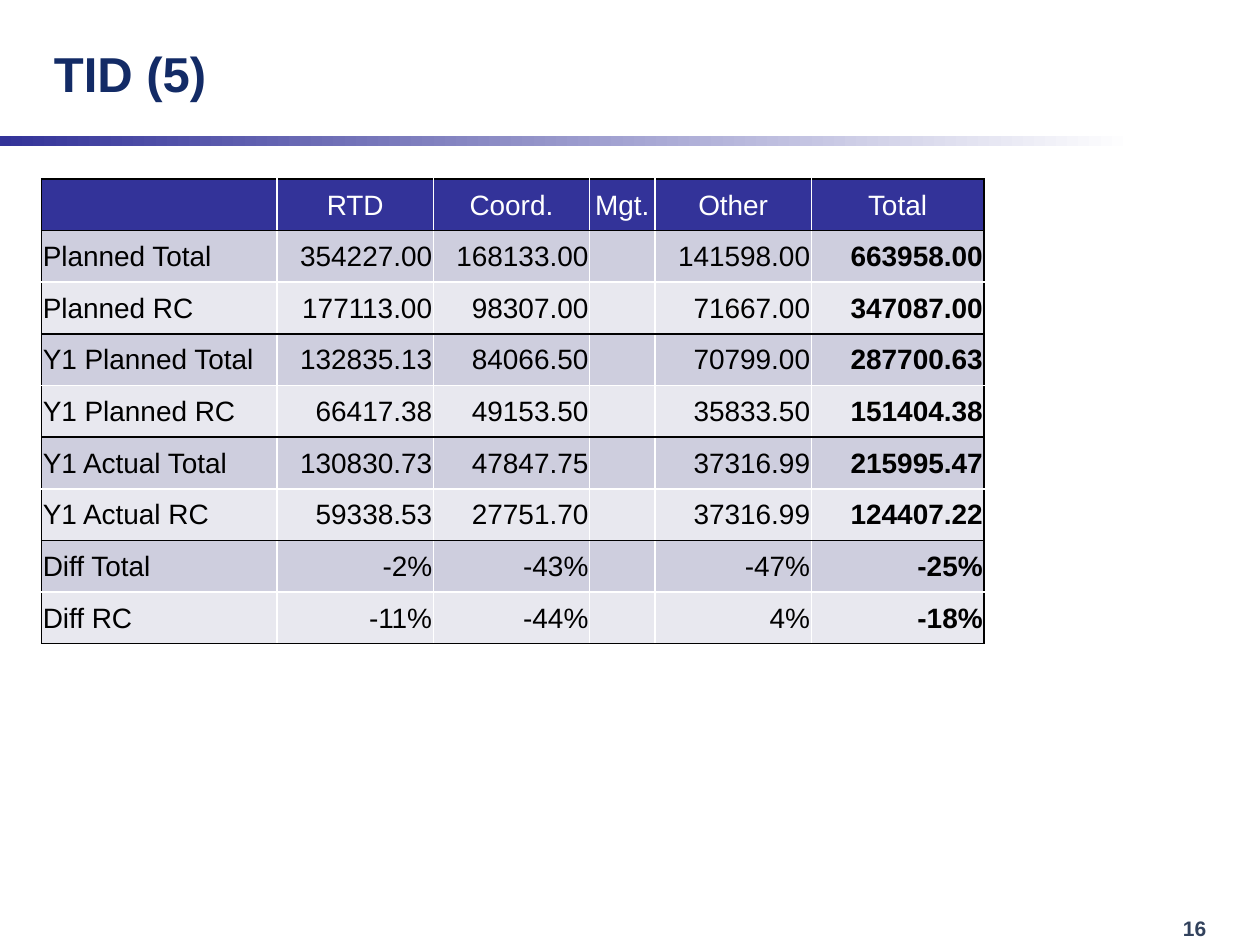
from pptx import Presentation
from pptx.dml.color import RGBColor
from pptx.enum.shapes import MSO_SHAPE
from pptx.enum.text import MSO_ANCHOR, PP_ALIGN
from pptx.oxml.ns import qn
from pptx.util import Inches, Pt
from lxml import etree

RECT = MSO_SHAPE.RECTANGLE
MIDDLE = MSO_ANCHOR.MIDDLE
LEFT, CENTER, RIGHT = PP_ALIGN.LEFT, PP_ALIGN.CENTER, PP_ALIGN.RIGHT

WHITE = RGBColor(0xFF, 0xFF, 0xFF)
BLACK = RGBColor(0, 0, 0)
BLUE = RGBColor(0x33, 0x33, 0x99)
NAVY = RGBColor(0x13, 0x2B, 0x66)
SLATE = RGBColor(0x32, 0x42, 0x5D)
DARK = RGBColor(0xCE, 0xCE, 0xDE)
LIGHT = RGBColor(0xE8, 0xE8, 0xEF)

COLS = [1.87, 1.24, 1.24, 0.52, 1.24, 1.37]
ROW = 0.41
DATA = [
    ["", "RTD", "Coord.", "Mgt.", "Other", "Total"],
    ["Planned Total", "354227.00", "168133.00", "", "141598.00", "663958.00"],
    ["Planned RC", "177113.00", "98307.00", "", "71667.00", "347087.00"],
    ["Y1 Planned Total", "132835.13", "84066.50", "", "70799.00", "287700.63"],
    ["Y1 Planned RC", "66417.38", "49153.50", "", "35833.50", "151404.38"],
    ["Y1 Actual Total", "130830.73", "47847.75", "", "37316.99", "215995.47"],
    ["Y1 Actual RC", "59338.53", "27751.70", "", "37316.99", "124407.22"],
    ["Diff Total", "-2%", "-43%", "", "-47%", "-25%"],
    ["Diff RC", "-11%", "-44%", "", "4%", "-18%"],
]


class Deck:
    def __init__(self, slide, font="Arial"):
        self.slide = slide
        self.font = font

    def style(self, para, size, color, bold=False, align=LEFT):
        para.alignment = align
        font = para.font
        for run in para.runs:
            font = run.font
        font.name, font.size, font.bold = self.font, Pt(size), bold
        font.color.rgb = color

    def text(self, words, left, top, width, height, size, color):
        box = self.slide.shapes.add_textbox(
            Inches(left), Inches(top), Inches(width), Inches(height))
        frame = box.text_frame
        frame.word_wrap = True
        frame.vertical_anchor = MIDDLE
        frame.text = words
        self.style(frame.paragraphs[0], size, color, bold=True)

    def band(self, left, top, width, height, start, end, stop):
        """Add a bar that fades from start to end, left to right."""
        bar = self.slide.shapes.add_shape(
            RECT, Inches(left), Inches(top), Inches(width), Inches(height))
        bar.shadow.inherit = False
        bar.line.fill.background()
        bar.fill.gradient()
        bar.fill.gradient_angle = 0
        for point, color, place in zip(
                bar.fill.gradient_stops, (start, end), (0, stop)):
            point.color.rgb = color
            point.position = place

    def edges(self, cell, colors):
        """Draw the left, right, top and bottom borders; call before filling."""
        props = cell._tc.get_or_add_tcPr()
        for side, color in zip("LRTB", colors):
            line = etree.SubElement(props, qn(f"a:ln{side}"), w=str(Pt(1)))
            fill = etree.SubElement(line, qn("a:solidFill"))
            etree.SubElement(fill, qn("a:srgbClr"), val=str(color))

    def cell(self, cell, words, fill, color, bold, align, borders):
        cell.margin_left = cell.margin_right = cell.margin_top = Inches(0.01)
        cell.margin_bottom = 0
        cell.vertical_anchor = MIDDLE
        self.edges(cell, borders)
        cell.fill.solid()
        cell.fill.fore_color.rgb = fill
        cell.text_frame.text = words
        self.style(cell.text_frame.paragraphs[0], 16, color, bold, align)

    def table(self, data, left, top, cols, height):
        last = len(cols) - 1
        grid = self.slide.shapes.add_table(
            len(data), len(cols), Inches(left), Inches(top),
            Inches(sum(cols)), Inches(height * len(data))).table
        for col, width in zip(grid.columns, cols):
            col.width = Inches(width)
        for r, row in enumerate(data):
            grid.rows[r].height = Inches(height)
            head, odd = r == 0, r % 2 == 1
            fill = BLUE if head else DARK if odd else LIGHT
            # Body rows come in pairs with a white rule inside each pair
            over = BLACK if head or odd else WHITE
            under = WHITE if odd else BLACK
            for c, words in enumerate(row):
                borders = (BLACK if c == 0 else WHITE,
                           BLACK if c == last else WHITE, over, under)
                align = CENTER if head else LEFT if c == 0 else RIGHT
                self.cell(grid.cell(r, c), words, fill,
                          WHITE if head else BLACK,
                          c == last and not head, align, borders)


def main():
    prs = Presentation()
    prs.slide_width, prs.slide_height = Inches(10), Inches(7.5)
    deck = Deck(prs.slides.add_slide(prs.slide_layouts[6]))
    deck.text("16", 9.29, 7.22, 0.64, 0.3, 12, SLATE)
    deck.band(0, 1.08, 10, 0.08, BLUE, WHITE, 0.9)
    deck.text("TID (5)", 0.33, 0.08, 7.08, 1, 28, NAVY)
    deck.table(DATA, 0.33, 1.42, COLS, ROW)
    prs.save("out.pptx")


if __name__ == "__main__":
    main()
